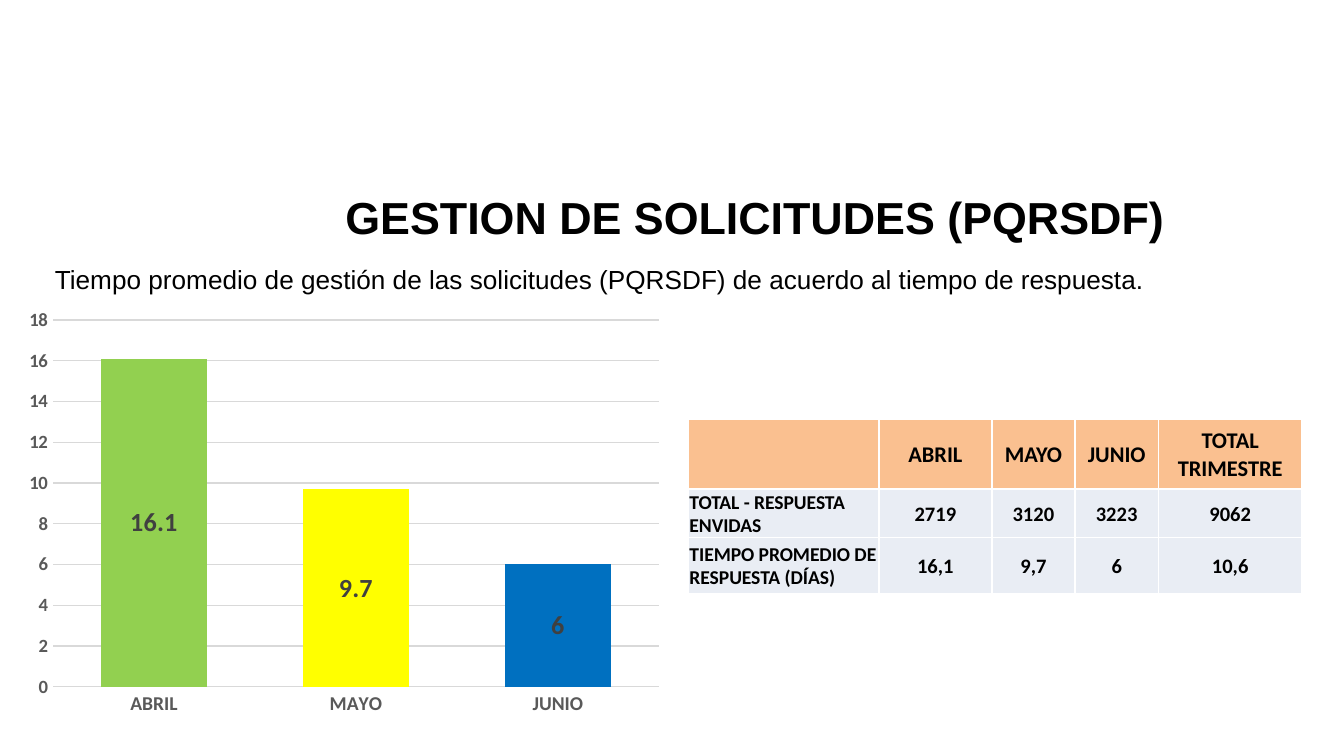
from lxml import etree
from pptx import Presentation
from pptx.chart.data import CategoryChartData
from pptx.dml.color import RGBColor
from pptx.enum import chart as charts, text
from pptx.oxml import ns
from pptx.util import Inches, Pt

COLORS = {
    "text": "000000", "header": "FAC090", "body": "E9EDF4", "border": "FFFFFF",
    "axis": "595959", "grid": "D9D9D9", "label": "404040", "series": "4F81BD",
    "ABRIL": "92D050", "MAYO": "FFFF00", "JUNIO": "0070C0",
}
MONTHS = ["ABRIL", "MAYO", "JUNIO"]
AVERAGE_DAYS = [16.1, 9.7, 6]
TABLE_ROWS = [
    ["", *MONTHS, "TOTAL TRIMESTRE"],
    ["TOTAL - RESPUESTA ENVIDAS", "2719", "3120", "3223", "9062"],
    ["TIEMPO PROMEDIO DE RESPUESTA (DÍAS)", "16,1", "9,7", "6", "10,6"],
]
COLUMN_WIDTHS = [1.42, 0.84, 0.62, 0.62, 1.07]
ROW_HEIGHTS = [0.52, 0.36, 0.42]


def rgb(name):
    return RGBColor.from_string(COLORS[name])


def set_font(font, size, color="text", bold=True, name="Calibri"):
    font.name, font.size, font.bold = name, Pt(size), bold
    font.color.rgb = rgb(color)


def fill_solid(fill, color):
    fill.solid()
    fill.fore_color.rgb = rgb(color)


def place(shape, left, top, width, height):
    shape.left, shape.top = Inches(left), Inches(top)
    shape.width, shape.height = Inches(width), Inches(height)


def add_title(slide):
    title = slide.shapes.title
    place(title, 2.47, 1.14, 7.36, 0.94)
    title.text_frame.text = "GESTION DE SOLICITUDES (PQRSDF)"
    title.text_frame.vertical_anchor = text.MSO_ANCHOR.MIDDLE
    paragraph = title.text_frame.paragraphs[0]
    paragraph.alignment = text.PP_ALIGN.LEFT
    set_font(paragraph.font, 24, name="Arial")


def add_subtitle(slide):
    box = slide.shapes.add_textbox(Inches(0.31), Inches(1.91), Inches(8.34), Inches(0.34))
    frame = box.text_frame
    frame.word_wrap = False
    frame.auto_size = text.MSO_AUTO_SIZE.SHAPE_TO_FIT_TEXT
    frame.text = ("Tiempo promedio de gestión de las solicitudes (PQRSDF) "
                  "de acuerdo al tiempo de respuesta.")
    set_font(frame.paragraphs[0].font, 14, bold=False, name="Arial")


def add_borders(cell):
    properties = cell._tc.get_or_add_tcPr()
    for index, side in enumerate(("lnL", "lnR", "lnT", "lnB")):
        line = etree.Element(ns.qn(f"a:{side}"), w=str(Pt(1)))
        fill = etree.SubElement(line, ns.qn("a:solidFill"))
        etree.SubElement(fill, ns.qn("a:srgbClr"), val=COLORS["border"])
        properties.insert(index, line)


def format_cell(cell, content, row, column):
    fill_solid(cell.fill, "body" if row else "header")
    add_borders(cell)
    cell.margin_left = cell.margin_right = cell.margin_top = Inches(0.01)
    cell.margin_bottom = 0
    cell.vertical_anchor = text.MSO_ANCHOR.MIDDLE
    cell.text = content
    paragraph = cell.text_frame.paragraphs[0]
    paragraph.alignment = text.PP_ALIGN.CENTER if column else text.PP_ALIGN.LEFT
    size = 12 if row == 0 else 11 if column else 10.5
    set_font(paragraph.font, size)


def add_summary_table(slide):
    table = slide.shapes.add_table(
        len(ROW_HEIGHTS), len(COLUMN_WIDTHS), Inches(5.12), Inches(3.12),
        Inches(sum(COLUMN_WIDTHS)), Inches(sum(ROW_HEIGHTS))).table
    for column, width in zip(table.columns, COLUMN_WIDTHS):
        column.width = Inches(width)
    for row, height in zip(table.rows, ROW_HEIGHTS):
        row.height = Inches(height)
    for row, contents in enumerate(TABLE_ROWS):
        for column, content in enumerate(contents):
            format_cell(table.cell(row, column), content, row, column)


def format_axis(axis, size):
    axis.major_tick_mark = axis.minor_tick_mark = charts.XL_TICK_MARK.NONE
    axis.format.line.fill.background()
    set_font(axis.tick_labels.font, size, "axis")


def add_days_chart(slide):
    data = CategoryChartData()
    data.categories = MONTHS
    data.add_series("Series 1", AVERAGE_DAYS)
    chart = slide.shapes.add_chart(
        charts.XL_CHART_TYPE.COLUMN_STACKED, Inches(0.12), Inches(2.24),
        Inches(4.88), Inches(3.15), data).chart
    chart.has_legend = chart.has_title = False
    set_font(chart.font, 10, bold=False)

    format_axis(chart.category_axis, 10.5)
    value_axis = chart.value_axis
    format_axis(value_axis, 10)
    value_axis.minimum_scale, value_axis.maximum_scale = 0, 18
    value_axis.major_unit = 2
    grid = value_axis.major_gridlines.format.line
    grid.color.rgb, grid.width = rgb("grid"), Pt(0.75)

    plot = chart.plots[0]
    plot.gap_width, plot.overlap = 90, 100
    plot.vary_by_categories = False
    series = plot.series[0]
    fill_solid(series.format.fill, "series")
    for index, month in enumerate(MONTHS):
        fill_solid(series.points[index].format.fill, month)
    labels = series.data_labels
    labels.show_value = True
    labels.position = charts.XL_LABEL_POSITION.CENTER
    set_font(labels.font, 14, "label")


def main():
    presentation = Presentation()
    presentation.slide_width = Inches(10)
    presentation.slide_height = Inches(10) * 9 // 16
    slide = presentation.slides.add_slide(presentation.slide_layouts[5])
    add_title(slide)
    add_subtitle(slide)
    add_summary_table(slide)
    add_days_chart(slide)
    presentation.save("out.pptx")


if __name__ == "__main__":
    main()
